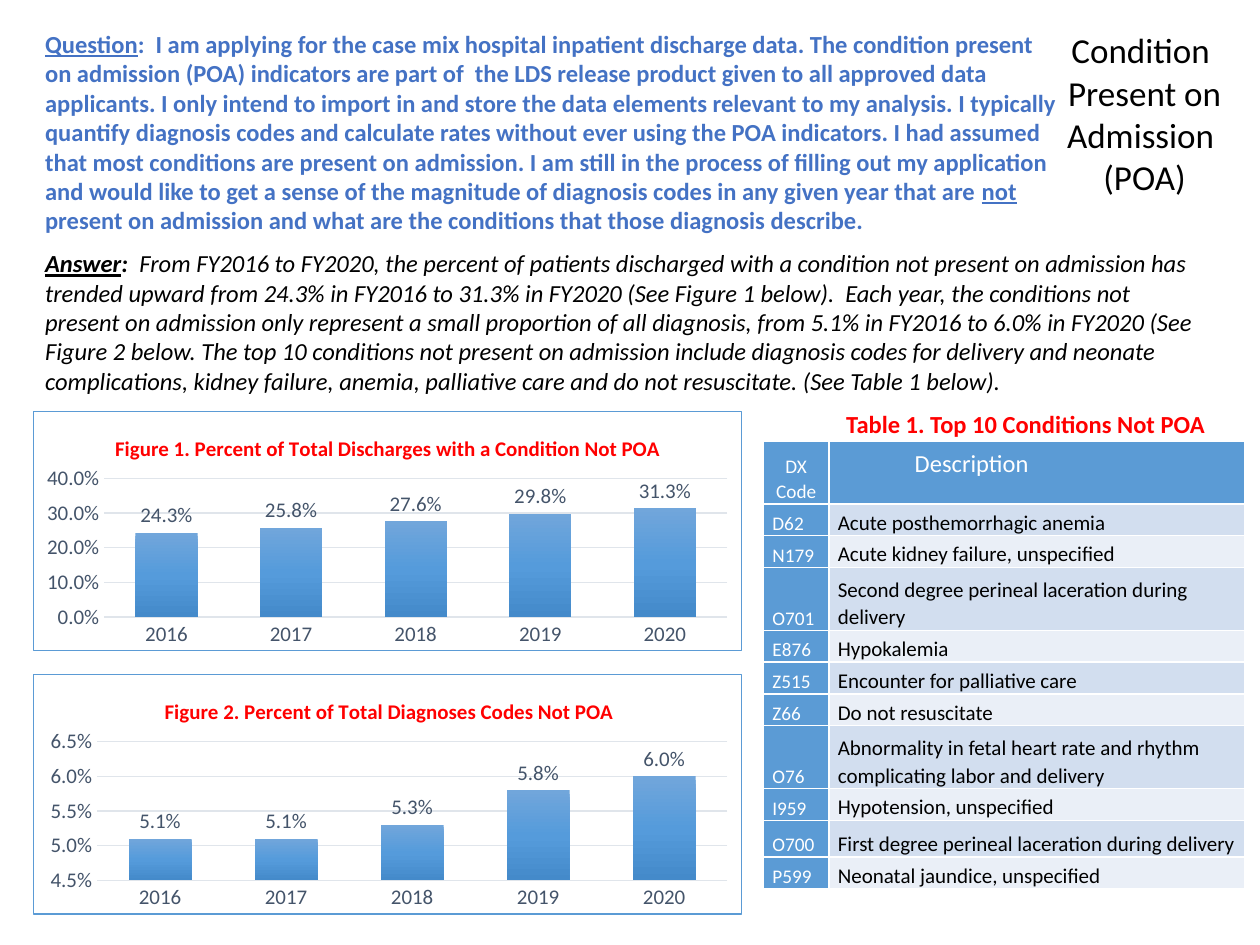
from dataclasses import dataclass

from lxml import etree
from pptx import Presentation
from pptx.chart.data import CategoryChartData
from pptx.dml.color import RGBColor
from pptx.enum.chart import XL_CHART_TYPE, XL_LABEL_POSITION, XL_TICK_MARK
from pptx.enum.text import MSO_ANCHOR, MSO_AUTO_SIZE, PP_ALIGN
from pptx.oxml import parse_xml
from pptx.oxml.ns import nsdecls, qn
from pptx.util import Cm, Pt

COLUMN = XL_CHART_TYPE.COLUMN_CLUSTERED
OUTSIDE_END = XL_LABEL_POSITION.OUTSIDE_END
NO_TICK = XL_TICK_MARK.NONE
BOTTOM = MSO_ANCHOR.BOTTOM
GROW = MSO_AUTO_SIZE.SHAPE_TO_FIT_TEXT
LEFT, CENTER = PP_ALIGN.LEFT, PP_ALIGN.CENTER


@dataclass(frozen=True)
class Theme:
    font: str = "Calibri"
    black: str = "000000"
    white: str = "FFFFFF"
    question: str = "4472C4"
    red: str = "FF0000"
    axis: str = "44546A"
    grid: str = "E0E5EB"
    accent: str = "5B9BD5"
    bands: tuple = ("D2DEEF", "EAEFF7")
    bar: tuple = ((0, "71A6DB"), (50, "559BDB"), (100, "448ACA"))
    heading: int = 20
    body: int = 14
    label: int = 12
    code: int = 11


T = Theme()


def write(p, text, size=T.body, color=T.black, bold=False, italic=False, underline=False):
    r = p.add_run()
    r.text = text
    f = r.font
    f.name, f.size, f.color.rgb = T.font, Pt(size), RGBColor.from_string(color)
    f.bold, f.italic, f.underline = bold, italic, underline


def set_layout(element, inner=False, **fractions):
    """Give a chart title or plot area a fixed place, as fractions of the chart."""
    for old in element.findall(qn("c:layout")):
        element.remove(old)
    parts = '<c:layoutTarget val="inner"/>' if inner else ""
    parts += "".join(f'<c:{k}Mode val="edge"/>' for k in ("x", "y"))
    parts += "".join(f'<c:{k} val="{v}"/>' for k, v in fractions.items())
    layout = parse_xml(f'<c:layout {nsdecls("c")}><c:manualLayout>{parts}</c:manualLayout></c:layout>')
    text = element.find(qn("c:tx"))
    if text is None:
        element.insert(0, layout)
    else:
        text.addnext(layout)


prs = Presentation()
prs.slide_width, prs.slide_height = Cm(25.4), Cm(19.05)
s = prs.slides.add_slide(prs.slide_layouts[6])

# Text boxes: place, wrap, alignment, paragraphs of (text, format) runs
heading = dict(size=T.heading)
question = dict(color=T.question, bold=True)
answer = dict(bold=True, italic=True)
boxes = [
    ((19.86, 0.46, 6.27, 3.68), True, CENTER,
     [[("Condition", heading)], [(" Present on Admission", heading)], [(" (POA)", heading)]]),
    ((0.66, 0.46, 20.98, 4.45), True, LEFT, [[
        ("Question", dict(question, underline=True)),
        (":  I am applying for the case mix hospital inpatient discharge data. The condition "
         "present on admission (POA) indicators are part of  the LDS release product given to all "
         "approved data applicants. I only intend to import in and store the data elements relevant "
         "to my analysis. I typically quantify diagnosis codes and calculate rates without ever "
         "using the POA indicators. I had assumed that most conditions are present on admission. "
         "I am still in the process of filling out my application  and would like to get a sense of "
         "the magnitude of diagnosis codes in any given year that are ", question),
        ("not", dict(question, underline=True)),
        (" present on admission and what are the conditions that those diagnosis describe.", question),
    ]]),
    ((0.66, 4.88, 24, 3.25), True, LEFT, [[
        ("Answer", dict(answer, underline=True)),
        (":  ", answer),
        ("From FY2016 to FY2020, the percent of patients discharged with a condition not present on "
         "admission has trended upward from 24.3% in FY2016 to 31.3% in FY2020 (See Figure 1 below).  "
         "Each year, the conditions not present on admission only represent a small proportion of all "
         "diagnosis, from 5.1% in FY2016 to 6.0% in FY2020 (See Figure 2 below. The top 10 conditions "
         "not present on admission include diagnosis codes for delivery and neonate complications, "
         "kidney failure, anemia, palliative care and do not resuscitate. (See Table 1 below).",
         dict(italic=True)),
    ]]),
    ((16.81, 8.13, 7.8, 0.86), False, LEFT,
     [[("Table 1. Top 10 Conditions Not POA", dict(color=T.red, bold=True))]]),
]
for place, wrap, align, paragraphs in boxes:
    tf = s.shapes.add_textbox(*map(Cm, place)).text_frame
    tf.word_wrap, tf.auto_size = wrap, GROW
    for i, runs in enumerate(paragraphs):
        p = tf.add_paragraph() if i else tf.paragraphs[0]
        p.alignment = align
        for text, fmt in runs:
            write(p, text, **fmt)

# Column charts: title, title x, plot x and width, top, axis minimum, maximum and step, values
years = ["2016", "2017", "2018", "2019", "2020"]
charts = [
    ("Figure 1. Percent of Total Discharges with a Condition Not POA", 0.11, 0.1, 0.88,
     8.28, (0, 0.4, 0.1), (0.243, 0.258, 0.276, 0.298, 0.313)),
    ("Figure 2. Percent of Total Diagnoses Codes Not POA", 0.18, 0.09, 0.89,
     13.59, (0.045, 0.065, 0.005), (0.051, 0.051, 0.053, 0.058, 0.06)),
]
for title, title_x, plot_x, plot_w, top, scale, values in charts:
    data = CategoryChartData(number_format="0.0%")
    data.categories = years
    data.add_series("Series 1", values)
    chart = s.shapes.add_chart(COLUMN, Cm(0.66), Cm(top), Cm(14.3), Cm(4.85), data).chart
    chart.has_legend = False
    chart.font.name, chart.font.size = T.font, Pt(T.label)
    chart.font.color.rgb = RGBColor.from_string(T.axis)
    write(chart.chart_title.text_frame.paragraphs[0], title, T.label, T.red, bold=True)
    set_layout(chart.chart_title._element, x=title_x, y=0.08)
    area = chart._chartSpace.chart
    set_layout(area.plotArea, inner=True, x=plot_x, y=0.28, w=plot_w, h=0.58)

    # Axes
    cat, val = chart.category_axis, chart.value_axis
    for axis in (cat, val):
        axis.major_tick_mark = axis.minor_tick_mark = NO_TICK
    val.minimum_scale, val.maximum_scale, val.major_unit = scale
    val.tick_labels.number_format, val.tick_labels.number_format_is_linked = "0.0%", False
    val.format.line.fill.background()
    for line in (cat.format.line, val.major_gridlines.format.line):
        line.color.rgb, line.width = RGBColor.from_string(T.grid), Pt(0.75)

    # Columns and labels
    plot = chart.plots[0]
    plot.gap_width, plot.overlap, plot.vary_by_categories = 100, -24, False
    plot.has_data_labels = True
    labels = plot.data_labels
    labels.show_value, labels.position = True, OUTSIDE_END
    labels.number_format, labels.number_format_is_linked = "0.0%", False
    fill = plot.series[0].format.fill
    fill.gradient()
    fill.gradient_angle = 270
    stops = plot.series[0]._element.find(".//" + qn("a:gsLst"))
    for old in list(stops):
        stops.remove(old)
    for pos, color in T.bar:
        gs = etree.SubElement(stops, qn("a:gs"), pos=str(pos * 1000))
        etree.SubElement(gs, qn("a:srgbClr"), val=color)

    # Frame
    area.addnext(parse_xml(
        f'<c:spPr {nsdecls("c", "a")}><a:solidFill><a:srgbClr val="{T.white}"/></a:solidFill>'
        f'<a:ln w="{Pt(0.75)}"><a:solidFill><a:srgbClr val="{T.accent}"/></a:solidFill></a:ln></c:spPr>'))

# Table: code, description, row height
rows = [
    ("DX Code", "Description", 1.27),
    ("D62", "Acute posthemorrhagic anemia", 0.64),
    ("N179", "Acute kidney failure, unspecified", 0.64),
    ("O701", "Second degree perineal laceration during delivery", 1.27),
    ("E876", "Hypokalemia", 0.64),
    ("Z515", "Encounter for palliative care", 0.64),
    ("Z66", "Do not resuscitate", 0.64),
    ("O76", "Abnormality in fetal heart rate and rhythm complicating labor and delivery", 1.27),
    ("I959", "Hypotension, unspecified", 0.64),
    ("O700", "First degree perineal laceration during delivery", 0.74),
    ("P599", "Neonatal jaundice, unspecified", 0.64),
]
height = sum(row[2] for row in rows)
table = s.shapes.add_table(len(rows), 2, Cm(15.39), Cm(8.89), Cm(9.7), Cm(height)).table
table.columns[0].width, table.columns[1].width = Cm(1.32), Cm(8.38)
for i, (*texts, row_height) in enumerate(rows):
    table.rows[i].height = Cm(row_height)
    for j, text in enumerate(texts):
        cell = table.cell(i, j)
        cell.vertical_anchor = BOTTOM
        cell.margin_left = cell.margin_right = Cm(0.18)
        cell.margin_top = cell.margin_bottom = 0
        accent = i == 0 or j == 0
        cell.fill.solid()
        cell.fill.fore_color.rgb = RGBColor.from_string(T.accent if accent else T.bands[(i - 1) % 2])
        p = cell.text_frame.paragraphs[0]
        p.line_spacing = 1.07
        size = T.code if j == 0 else T.body if i == 0 else T.label
        write(p, text, size, T.white if accent else T.black)
table.cell(0, 0).text_frame.paragraphs[0].alignment = CENTER
table.cell(0, 1).margin_left, table.cell(0, 1).margin_bottom = Cm(1.73), Cm(0.5)

prs.save("out.pptx")
